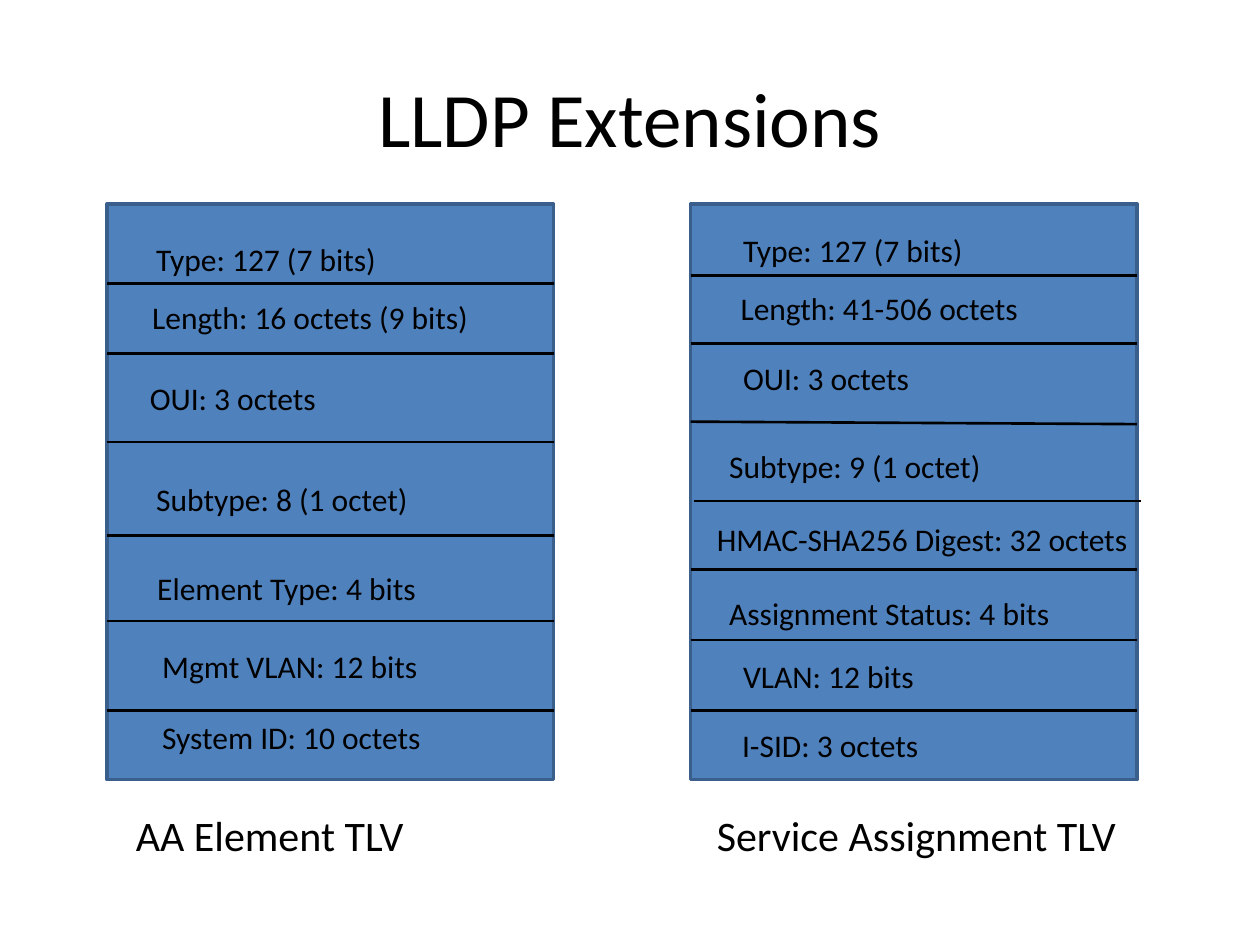
from lxml.etree import SubElement
from pptx import Presentation
from pptx.dml.color import RGBColor
from pptx.enum.shapes import MSO_CONNECTOR, MSO_SHAPE
from pptx.enum.text import MSO_ANCHOR, PP_ALIGN
from pptx.oxml.ns import qn
from pptx.util import Cm, Pt

BLACK = RGBColor(0x00, 0x00, 0x00)
BLUE = RGBColor(0x4F, 0x81, 0xBD)
BORDER = RGBColor(0x3A, 0x5F, 0x8C)

TITLE_FORMAT = {"size": Pt(44), "name": "Calibri"}
CAPTION_FORMAT = {"size": Pt(24), "name": "Calibri"}
FIELD_FORMAT = {"size": Pt(18), "name": "Calibri"}

BOX_TOP, BOX_WIDTH, BOX_HEIGHT = 4.11, 9, 11.61
CAPTION_DROP = 12.09
FIELD_WIDTH, FIELD_HEIGHT = 7.8, 1.02

# Fields are (text, left, top); dividers are (start left, start top, end top).
ELEMENT_TLV = {
    "caption": ("AA Element TLV", 0.33, 7.8),
    "fields": [
        ("Type: 127 (7 bits)", 0.74, 0.61),
        ("Length: 16 octets (9 bits)", 0.66, 1.78),
        ("OUI: 3 octets", 0.61, 3.4),
        ("Subtype: 8 (1 octet)", 0.74, 5.44),
        ("Element Type: 4 bits", 0.76, 7.24),
        ("Mgmt VLAN: 12 bits", 0.86, 8.81),
        ("System ID: 10 octets", 0.86, 10.24),
    ],
    "dividers": [(0, top, top) for top in (1.6, 3.02, 4.8, 6.68, 8.41, 10.21)],
}
SERVICE_TLV = {
    "caption": ("Service Assignment TLV", 0.28, 9.91),
    "fields": [
        ("Type: 127 (7 bits)", 0.81, 0.43),
        ("Length: 41-506 octets", 0.76, 1.6),
        ("OUI: 3 octets", 0.81, 3),
        ("Subtype: 9 (1 octet)", 0.53, 4.78),
        ("HMAC-SHA256 Digest: 32 octets", 0.28, 6.25, 8.81),
        ("Assignment Status: 4 bits", 0.53, 7.75),
        ("VLAN: 12 bits", 0.81, 9.02),
        ("I-SID: 3 octets", 0.79, 10.41),
    ],
    "dividers": [
        (0, 1.45, 1.45),
        (0, 2.82, 2.82),
        (0, 4.39, 4.44),
        (0.08, 5.99, 5.99),
        (0, 7.37, 7.37),
        (0, 8.79, 8.79),
        (0, 10.21, 10.21),
    ],
}


def add_text(page, text, left, top, width, height, font_format):
    """Add a wrapped one-line text box and return it."""
    box = page.shapes.add_textbox(Cm(left), Cm(top), Cm(width), Cm(height))
    box.text_frame.word_wrap = True
    span = box.text_frame.paragraphs[0].add_run()
    span.text = text
    for attribute, value in font_format.items():
        setattr(span.font, attribute, value)
    span.font.color.rgb = BLACK
    return box


def add_title(page, text, left, top, width, height):
    """Add the centred slide title."""
    box = add_text(page, text, left, top, width, height, TITLE_FORMAT)
    box.text_frame.vertical_anchor = MSO_ANCHOR.MIDDLE
    box.text_frame.paragraphs[0].alignment = PP_ALIGN.CENTER


def add_divider(page, left, start_top, end_top, width):
    """Add a black line between two fields."""
    divider = page.shapes.add_connector(
        MSO_CONNECTOR.STRAIGHT, Cm(left), Cm(start_top), Cm(left + width), Cm(end_top)
    )
    divider.line.color.rgb = BLACK
    divider.line.width = Pt(1.5)
    SubElement(divider.element.spPr, qn("a:effectLst"))


def add_tlv(page, tlv, left, top, width, height):
    """Draw one TLV block with its dividers, fields and caption."""
    block = page.shapes.add_shape(
        MSO_SHAPE.RECTANGLE, Cm(left), Cm(top), Cm(width), Cm(height)
    )
    block.shadow.inherit = False
    block.fill.solid()
    block.fill.fore_color.rgb = BLUE
    block.line.color.rgb = BORDER
    block.line.width = Pt(2)
    for shift, start, end in tlv["dividers"]:
        add_divider(page, left + shift, top + start, top + end, width)
    for text, indent, drop, *wide in tlv["fields"]:
        field_width = wide[0] if wide else FIELD_WIDTH
        add_text(page, text, left + indent, top + drop, field_width, FIELD_HEIGHT, FIELD_FORMAT)
    caption, indent, caption_width = tlv["caption"]
    add_text(page, caption, left + indent, top + CAPTION_DROP, caption_width, 1.28, CAPTION_FORMAT)


def main():
    """Build and save the slide."""
    deck = Presentation()
    deck.slide_width, deck.slide_height = Cm(25.4), Cm(19.05)
    page = deck.slides.add_slide(deck.slide_layouts[6])
    add_title(page, "LLDP Extensions", 1.27, 0.76, 22.86, 3.18)
    for tlv, left in ((ELEMENT_TLV, 2.16), (SERVICE_TLV, 13.92)):
        add_tlv(page, tlv, left, BOX_TOP, BOX_WIDTH, BOX_HEIGHT)
    deck.save("out.pptx")


if __name__ == "__main__":
    main()
